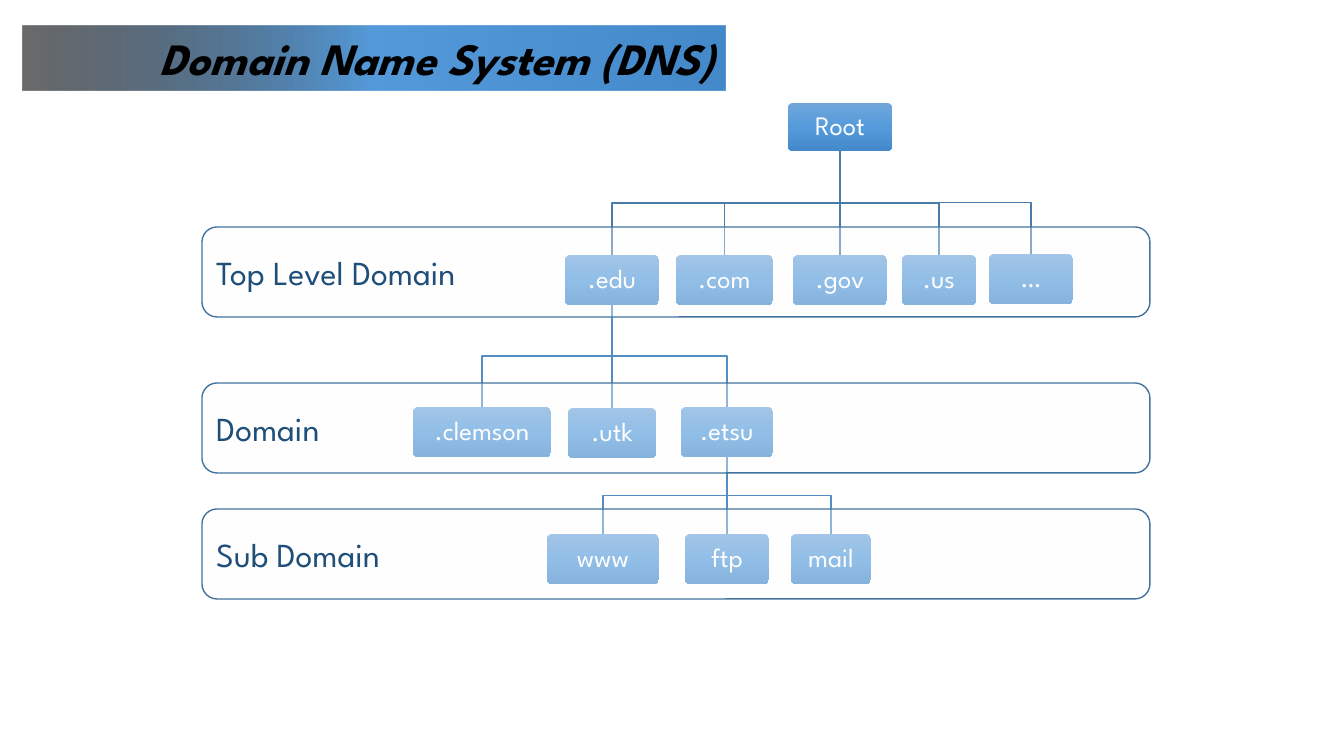
from lxml import etree
from pptx import Presentation
from pptx.dml.color import RGBColor
from pptx.enum.shapes import MSO_CONNECTOR, MSO_SHAPE
from pptx.enum.text import MSO_ANCHOR, MSO_AUTO_SIZE, PP_ALIGN
from pptx.oxml.ns import qn
from pptx.util import Pt

STRAIGHT = MSO_CONNECTOR.STRAIGHT
RECTANGLE, ROUNDED = MSO_SHAPE.RECTANGLE, MSO_SHAPE.ROUNDED_RECTANGLE
TOP, MIDDLE = MSO_ANCHOR.TOP, MSO_ANCHOR.MIDDLE
LEFT, CENTER, RIGHT = PP_ALIGN.LEFT, PP_ALIGN.CENTER, PP_ALIGN.RIGHT
BOTTOM_SITE, TOP_SITE = 2, 0

BLACK = RGBColor(0x00, 0x00, 0x00)
WHITE = RGBColor(0xFF, 0xFF, 0xFF)
NAVY = RGBColor(0x1F, 0x4E, 0x79)
BAND_FILL = RGBColor(0xFD, 0xFD, 0xFD)
BAND_LINE = RGBColor(0x43, 0x73, 0x9E)
ROOT_LINK = RGBColor(0x49, 0x7C, 0xAB)
LOWER_LINK = RGBColor(0x53, 0x8D, 0xC1)
BLUE_LIGHT = RGBColor(0x71, 0xA6, 0xDB)
BLUE_MID = RGBColor(0x55, 0x9B, 0xDB)
BLUE_DEEP = RGBColor(0x44, 0x8A, 0xCA)

FONT = "League Spartan"
PX = 914400 / 100.8
SLIDE_W, SLIDE_H = 1344, 756
NODE_H = 50

TITLE = "Domain Name System (DNS)"
TITLE_BOX = (23, 26, 702, 64)
BAND_LEFT, BAND_W, BAND_H = 202, 948, 90
BANDS = [("Top Level Domain", 227), ("Domain", 383), ("Sub Domain", 509)]

# name, parent, left, top, width
NODES = [
    ("Root", None, 788, 103, 104),
    (".edu", "Root", 565, 255, 94),
    (".com", "Root", 676, 255, 97),
    (".gov", "Root", 793, 255, 94),
    (".us", "Root", 902, 255, 74),
    ("…", "Root", 989, 254, 84),
    (".clemson", ".edu", 413, 407, 138),
    (".utk", ".edu", 568, 408, 88),
    (".etsu", ".edu", 681, 407, 92),
    ("www", ".etsu", 547, 534, 112),
    ("ftp", ".etsu", 685, 534, 84),
    ("mail", ".etsu", 791, 534, 80),
]


def emu(px):
    return round(px * PX)


def set_alpha(color_element, percent):
    etree.SubElement(color_element, qn("a:alpha"), val=str(percent * 1000))


def gradient(shape, first, angle, first_alpha=100):
    """Fill with three stops, from first to the deep blue; angle is clockwise."""
    shape.fill.gradient()
    grad = shape.fill._fill._gradFill
    stops = grad.find(qn("a:gsLst"))
    for stop in list(stops):
        stops.remove(stop)
    for position, color in ((0, first), (50, BLUE_MID), (100, BLUE_DEEP)):
        stop = etree.SubElement(stops, qn("a:gs"), pos=str(position * 1000))
        value = etree.SubElement(stop, qn("a:srgbClr"), val=str(color))
        if position == 0 and first_alpha < 100:
            set_alpha(value, first_alpha)
    grad.find(qn("a:lin")).set("ang", str(angle * 60000))


def add_box(slide, kind, box, label, size, color, align, anchor=MIDDLE):
    shape = slide.shapes.add_shape(kind, *map(emu, box))
    shape.shadow.inherit = False
    shape.line.fill.background()
    frame = shape.text_frame
    frame.word_wrap = True
    frame.vertical_anchor = anchor
    frame.text = label
    paragraph = frame.paragraphs[0]
    paragraph.alignment = align
    font = paragraph.runs[0].font
    font.name, font.size, font.color.rgb = FONT, Pt(size), color
    return shape


def add_node(slide, name, left, top, width):
    height = 48 if name == "Root" else NODE_H
    node = add_box(slide, ROUNDED, (left, top, width, height), name, 19, WHITE, CENTER)
    node.adjustments[0] = 0.1
    gradient(node, BLUE_LIGHT, 90)
    frame = node.text_frame
    frame.margin_left = frame.margin_right = emu(9)
    frame.margin_top = frame.margin_bottom = emu(9)
    frame.paragraphs[0].line_spacing = 0.9
    return node


def add_link(slide, parent, child, color):
    """Join two nodes: straight when aligned, otherwise bent at half height."""
    start_x, end_x = (node.left + node.width // 2 for node in (parent, child))
    start_y, end_y = parent.top + parent.height, child.top
    if abs(start_x - end_x) < emu(1):
        link = slide.shapes.add_connector(STRAIGHT, start_x, start_y, end_x, end_y)
        link.begin_connect(parent, BOTTOM_SITE)
        link.end_connect(child, TOP_SITE)
        etree.SubElement(link._element.spPr, qn("a:effectLst"))
    else:
        bend_y = (start_y + end_y) // 2
        outline = slide.shapes.build_freeform(start_x, start_y)
        outline.add_line_segments(
            [(start_x, bend_y), (end_x, bend_y), (end_x, end_y)], close=False)
        link = outline.convert_to_shape()
        link.fill.background()
        link.shadow.inherit = False
    link.line.color.rgb = color
    link.line.width = Pt(1)


def add_band(slide, label, top):
    band = add_box(slide, ROUNDED, (BAND_LEFT, top, BAND_W, BAND_H), label, 24, NAVY, LEFT)
    band.fill.solid()
    band.fill.fore_color.rgb = BAND_FILL
    set_alpha(band._element.spPr.find(qn("a:solidFill"))[0], 36)
    band.line.color.rgb = BAND_LINE
    band.line.width = Pt(1)


def add_title(slide):
    title = add_box(slide, RECTANGLE, TITLE_BOX, TITLE, 32, BLACK, RIGHT, TOP)
    gradient(title, BLACK, 0, first_alpha=58)
    title.text_frame.auto_size = MSO_AUTO_SIZE.SHAPE_TO_FIT_TEXT
    font = title.text_frame.paragraphs[0].runs[0].font
    font.bold = font.italic = True


def main():
    prs = Presentation()
    prs.slide_width, prs.slide_height = emu(SLIDE_W), emu(SLIDE_H)
    slide = prs.slides.add_slide(prs.slide_layouts[6])
    nodes = {name: add_node(slide, name, left, top, width)
             for name, _, left, top, width in NODES}
    for name, parent, *_ in NODES:
        if parent:
            color = ROOT_LINK if parent == "Root" else LOWER_LINK
            add_link(slide, nodes[parent], nodes[name], color)
    for label, top in BANDS:
        add_band(slide, label, top)
    add_title(slide)
    prs.save("out.pptx")


if __name__ == "__main__":
    main()
